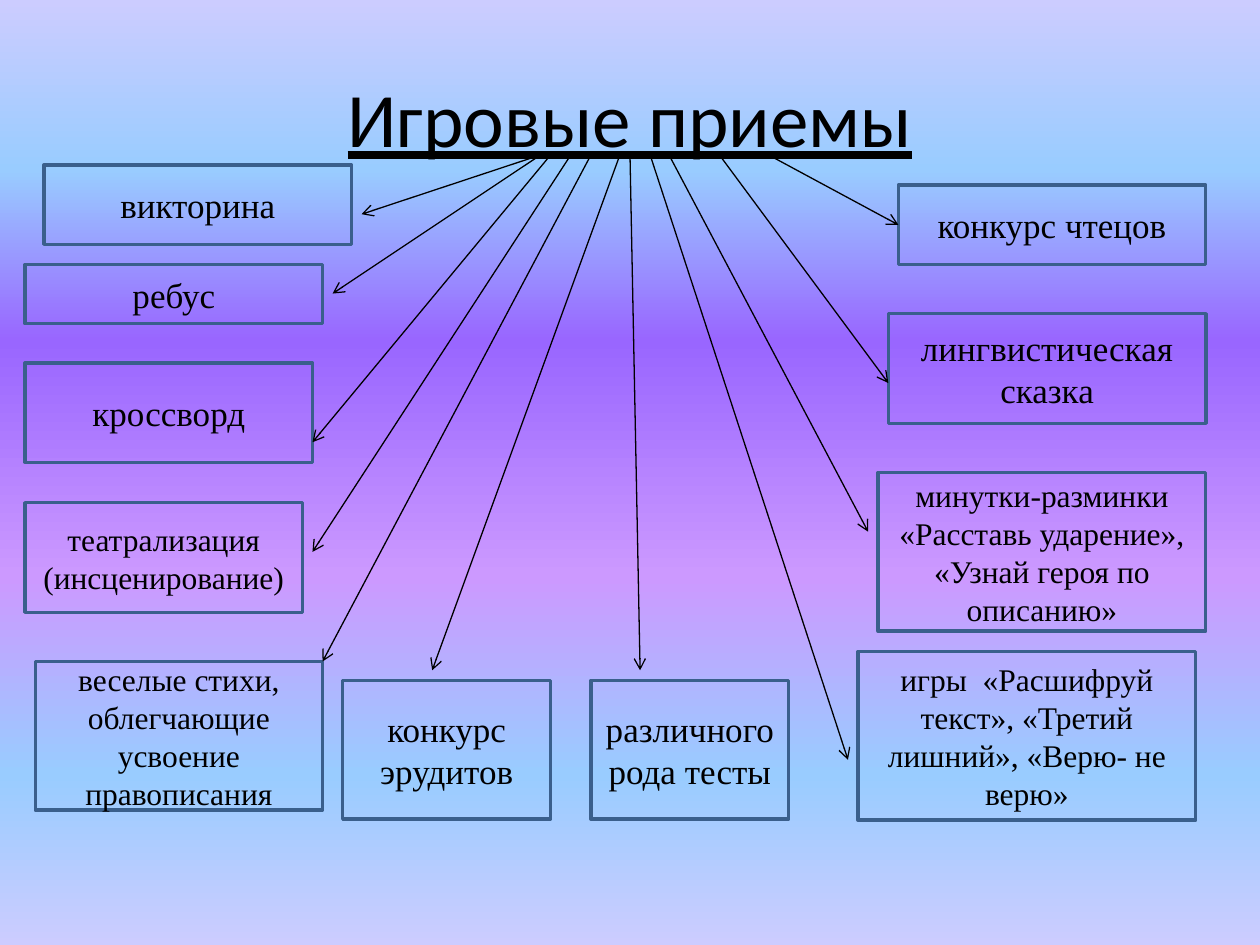
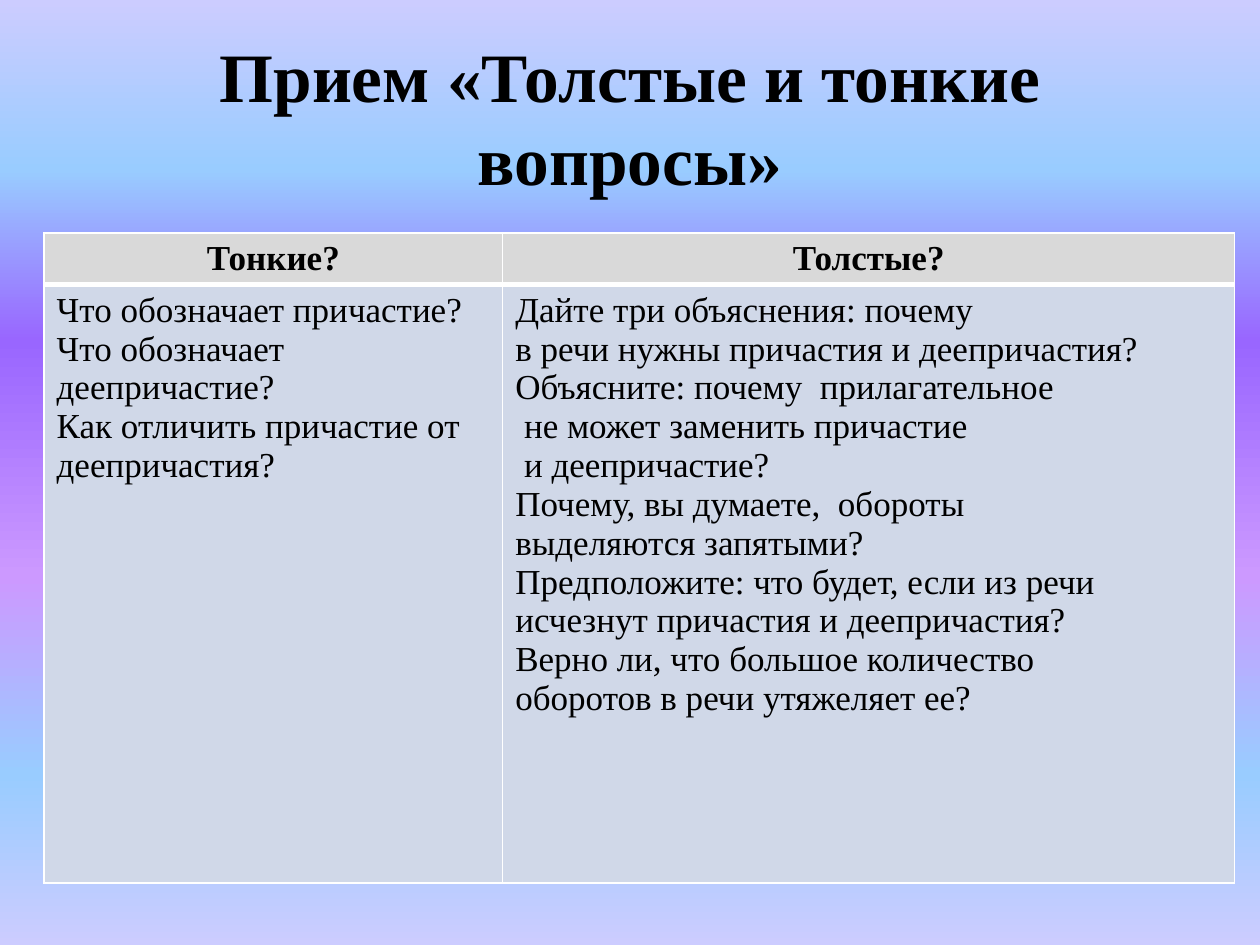
from lxml import etree
from pptx import Presentation
from pptx.dml.color import RGBColor
from pptx.enum.shapes import MSO_CONNECTOR, MSO_SHAPE
from pptx.enum.text import MSO_ANCHOR, MSO_AUTO_SIZE, PP_ALIGN
from pptx.oxml.ns import qn
from pptx.util import Inches, Pt

# Content
COLORS = {"text": "000000", "outline": "3A5F8C", "header": "D9D9D9",
          "body": "D0D8E8", "border": "FFFFFF"}
SERIF = "Times New Roman"
BACKGROUND_STOPS = [(0, "CCCCFF"), (18, "99CCFF"), (36, "9966FF"),
                    (61, "CC99FF"), (82, "99CCFF"), (100, "CCCCFF")]

TECHNIQUES_TITLE = "Игровые приемы"
# text, font size, box (left, top, width, height), arrow start x, arrow tip
TECHNIQUES = [
    ("викторина", 20, (0.35, 1.31, 2.44, 0.63), 4.29, (2.87, 1.7)),
    ("ребус", 20, (0.2, 2.1, 2.36, 0.47), 4.29, (2.64, 2.33)),
    ("кроссворд", 20, (0.2, 2.88, 2.28, 0.79), 4.37, (2.48, 3.51)),
    ("театрализация (инсценирование)", 18, (0.2, 3.99, 2.2, 0.87), 4.53, (2.48, 4.38)),
    ("веселые стихи, облегчающие усвоение правописания", 18,
     (0.28, 5.25, 2.28, 1.18), 4.69, (2.56, 5.25)),
    ("конкурс эрудитов", 20, (2.72, 5.4, 1.65, 1.1), 4.92, (3.43, 5.32)),
    ("различного рода тесты", 20, (4.69, 5.4, 1.57, 1.1), 5, (5.08, 5.32)),
    ("игры  «Расшифруй текст», «Третий лишний», «Верю- не верю»", 18,
     (6.81, 5.17, 2.68, 1.34), 5.16, (6.73, 6.03)),
    ("минутки-разминки «Расставь ударение», «Узнай героя по описанию»", 18,
     (6.97, 3.75, 2.6, 1.26), 5.31, (6.89, 4.22)),
    ("лингвистическая сказка", 20, (7.05, 2.49, 2.52, 0.87), 5.71, (7.05, 3.04)),
    # No tip: the arrow is joined to the left side of the box
    ("конкурс чтецов", 20, (7.13, 1.47, 2.44, 0.63), 6.1, None),
]
ARROW_START_Y = 1.23

QUESTIONS_TITLE = "Прием «Толстые и тонкие вопросы»"
QUESTIONS = {
    "Тонкие?": [
        "Что обозначает причастие?",
        "Что обозначает деепричастие?",
        "Как отличить причастие от деепричастия?",
    ],
    "Толстые?": [
        "Дайте три объяснения: почему",
        "в речи нужны причастия и деепричастия?",
        "Объясните: почему  прилагательное",
        " не может заменить причастие",
        " и деепричастие?",
        "Почему, вы думаете,  обороты",
        "выделяются запятыми?",
        "Предположите: что будет, если из речи",
        "исчезнут причастия и деепричастия?",
        "Верно ли, что большое количество",
        "оборотов в речи утяжеляет ее?",
    ],
}
COLUMN_WIDTHS = [3.64, 5.81]
ROW_HEIGHTS = [0.39, 4.75]


def rgb(name):
    return RGBColor.from_string(COLORS[name])


def write(frame, lines, size, font=SERIF, align=PP_ALIGN.CENTER, bold=False, underline=None):
    frame.text = "\n".join(lines)
    for paragraph in frame.paragraphs:
        paragraph.alignment = align
        paragraph.font.name = font
        paragraph.font.size = Pt(size)
        paragraph.font.bold = bold
        paragraph.font.underline = underline
        paragraph.font.color.rgb = rgb("text")


def paint_background(master):
    fill = master.background.fill
    fill.gradient()
    fill.gradient_angle = 270
    stops = master.element.find(".//" + qn("a:gsLst"))
    for stop in list(stops):
        stops.remove(stop)
    for percent, color in BACKGROUND_STOPS:
        stop = etree.SubElement(stops, qn("a:gs"), pos=str(percent * 1000))
        etree.SubElement(stop, qn("a:srgbClr"), val=color)


def add_titled_slide(prs, title, size, **style):
    slide = prs.slides.add_slide(prs.slide_layouts[5])
    heading = slide.shapes.title
    heading.left, heading.top, heading.width, heading.height = map(
        Inches, (0.5, 0.3, 9, 1.25))
    frame = heading.text_frame
    frame.auto_size = MSO_AUTO_SIZE.NONE
    frame.vertical_anchor = MSO_ANCHOR.MIDDLE
    write(frame, [title], size, **style)
    return slide


def add_technique(slide, text, size, place):
    box = slide.shapes.add_shape(MSO_SHAPE.RECTANGLE, *map(Inches, place))
    box.shadow.inherit = False
    box.fill.background()
    box.line.color.rgb = rgb("outline")
    box.line.width = Pt(2)
    box.text_frame.vertical_anchor = MSO_ANCHOR.MIDDLE
    write(box.text_frame, [text], size)
    return box


def add_arrow(slide, start_x, tip, box):
    end = tip or (0, 0)
    arrow = slide.shapes.add_connector(
        MSO_CONNECTOR.STRAIGHT, *map(Inches, (start_x, ARROW_START_Y, *end)))
    if tip is None:
        arrow.end_connect(box, 1)
    arrow.line.color.rgb = rgb("text")
    arrow.line.width = Pt(0.75)
    properties = arrow.line._get_or_add_ln()
    etree.SubElement(properties, qn("a:tailEnd"), type="arrow")
    etree.SubElement(properties.getparent(), qn("a:effectLst"))


def format_cell(cell, fill, bottom_width):
    properties = cell._tc.get_or_add_tcPr()
    for side, width in (("L", 1), ("R", 1), ("T", 1), ("B", bottom_width)):
        border = etree.SubElement(properties, qn("a:ln" + side), w=str(Pt(width)))
        solid = etree.SubElement(border, qn("a:solidFill"))
        etree.SubElement(solid, qn("a:srgbClr"), val=COLORS["border"])
    cell.fill.solid()
    cell.fill.fore_color.rgb = rgb(fill)


def build_techniques(prs):
    slide = add_titled_slide(prs, TECHNIQUES_TITLE, 44, font="Calibri", underline=True)
    for text, size, place, start_x, tip in TECHNIQUES:
        box = add_technique(slide, text, size, place)
        add_arrow(slide, start_x, tip, box)


def build_questions(prs):
    slide = add_titled_slide(prs, QUESTIONS_TITLE, 39.6, bold=True)
    table = slide.shapes.add_table(
        2, len(QUESTIONS), Inches(0.35), Inches(1.85),
        Inches(sum(COLUMN_WIDTHS)), Inches(sum(ROW_HEIGHTS))).table
    for row, height in zip(table.rows, ROW_HEIGHTS):
        row.height = Inches(height)
    for index, (heading, questions) in enumerate(QUESTIONS.items()):
        table.columns[index].width = Inches(COLUMN_WIDTHS[index])
        header, body = table.cell(0, index), table.cell(1, index)
        write(header.text_frame, [heading], 20, bold=True)
        write(body.text_frame, questions, 20, align=PP_ALIGN.LEFT)
        format_cell(header, "header", 3)
        format_cell(body, "body", 1)
        # The heavy rule under the header belongs to both rows
        body._tc.tcPr.find(qn("a:lnT")).set("w", str(Pt(3)))


def main():
    prs = Presentation()
    prs.slide_width, prs.slide_height = Inches(10), Inches(7.5)
    paint_background(prs.slide_master)
    build_techniques(prs)
    build_questions(prs)
    prs.save("out.pptx")


if __name__ == "__main__":
    main()
